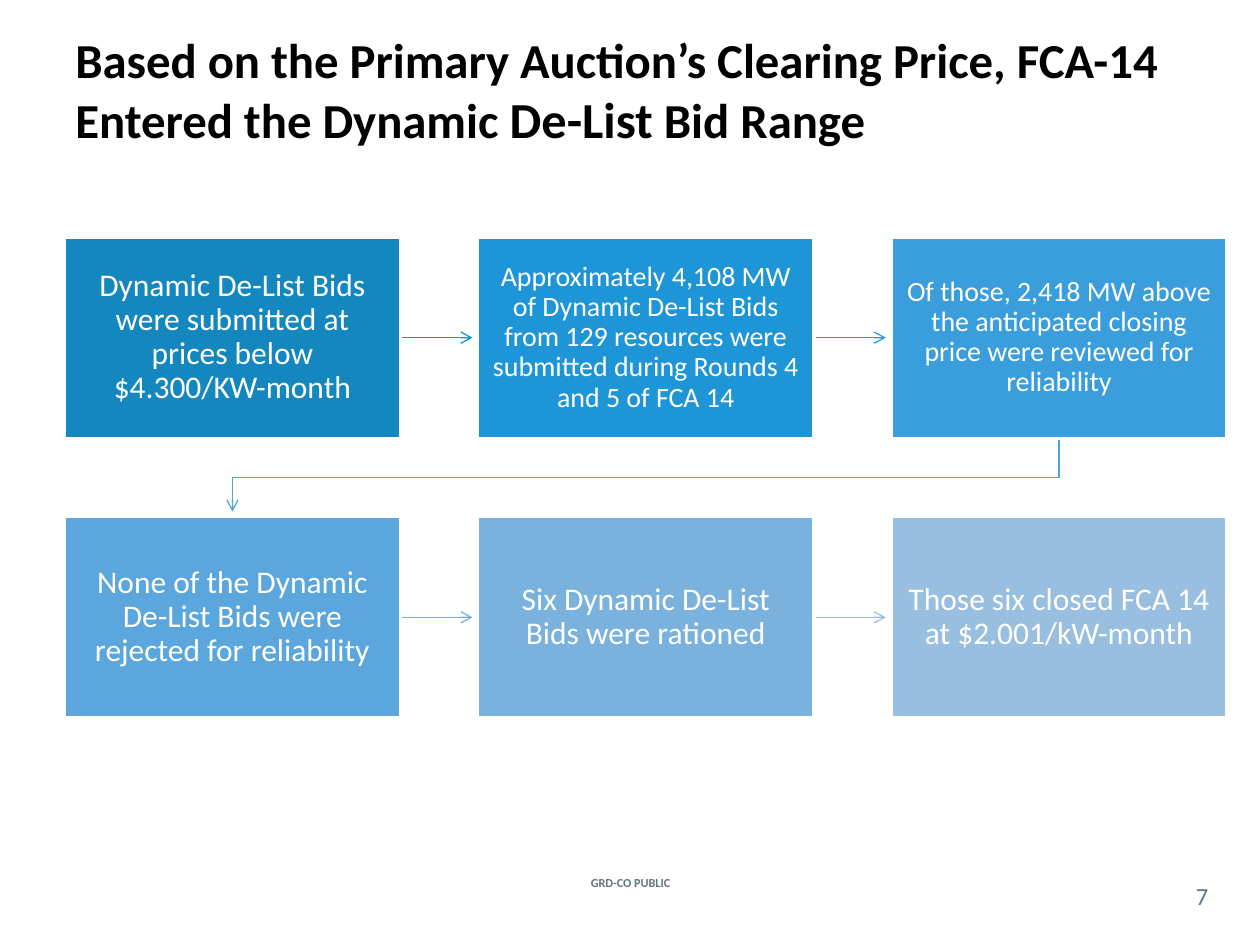
from pptx import Presentation
from pptx import util as u
from pptx.dml.color import RGBColor
from pptx.enum import shapes, text
from pptx.oxml.ns import qn
from lxml import etree

WHITE, GREY = "FFFFFF", "62777F"
BOX_W, BOX_H = 2.67, 1.6
COLS, ROWS = (0.51, 3.79, 7.07), (1.88, 4.1)

# label, text size, box colour, colour of the arrow to the next box
STEPS = [
    ("Dynamic De-List Bids were submitted at prices below $4.300/KW-month", 18, "1587BF", "168EC9"),
    ("Approximately 4,108 MW of Dynamic De-List Bids from 129 resources were submitted "
     "during Rounds 4 and 5 of FCA 14", 16, "1E95D6", "269CDE"),
    ("Of those, 2,418 MW above the anticipated closing price were reviewed for reliability",
     16, "3A9DDC", "4EA4DD"),
    ("None of the Dynamic De-List Bids were rejected for reliability", 18, "5BA6DC", "74AFDD"),
    ("Six Dynamic De-List Bids were rationed", 18, "7AB1DD", "97BEE1"),
    ("Those six closed FCA 14 at $2.001/kW-month", 18, "98BEE0", None),
]


def write(sp, runs, color, align, inset, bold=False):
    """Fill a shape with one paragraph made of (text, size) runs."""
    tf = sp.text_frame
    tf.word_wrap = True
    tf.vertical_anchor = text.MSO_ANCHOR.MIDDLE
    tf.margin_left = tf.margin_right = tf.margin_top = tf.margin_bottom = u.Inches(inset)
    p = tf.paragraphs[0]
    p.alignment = align
    p.font.name, p.font.bold = "Calibri", bold
    p.font.color.rgb = RGBColor.from_string(color)
    for words, size in runs:
        r = p.add_run()
        r.text, r.font.size = words, u.Pt(size)
    return p


def style_arrow(sp, color):
    sp.line.color.rgb = RGBColor.from_string(color)
    sp.line.width = u.Pt(0.75)
    etree.SubElement(sp.line._get_or_add_ln(), qn("a:tailEnd"), type="arrow")
    if sp._element.spPr.find(qn("a:effectLst")) is None:
        etree.SubElement(sp._element.spPr, qn("a:effectLst"))


prs = Presentation()
prs.slide_width, prs.slide_height = u.Inches(10), u.Inches(7.5)
s = prs.slides.add_slide(prs.slide_layouts[6])
center, left = text.PP_ALIGN.CENTER, text.PP_ALIGN.LEFT

title = s.shapes.add_textbox(u.Inches(0.5), u.Inches(0.08), u.Inches(9), u.Inches(1.25))
write(title, [("Based on the Primary Auction’s Clearing Price, FCA-14 Entered the Dynamic ", 27.9),
              ("De-List", 28.8), (" Bid Range", 27.9)], "000000", left, 0.1, bold=True)

for i, (label, size, fill, arrow) in enumerate(STEPS):
    x, y = COLS[i % 3], ROWS[i // 3]
    if i == 2:  # down and back to the start of the second row
        start, end = x + BOX_W / 2, COLS[0] + BOX_W / 2
        bottom, mid = y + BOX_H, y + BOX_H + 0.31
        fb = s.shapes.build_freeform(u.Inches(start), u.Inches(bottom))
        fb.add_line_segments([(u.Inches(a), u.Inches(b)) for a, b in
                              ((start, mid), (end, mid), (end, ROWS[1] - 0.04))], close=False)
        elbow = fb.convert_to_shape()
        elbow.fill.background()
        elbow.shadow.inherit = False
        style_arrow(elbow, arrow)
    elif arrow:
        mid = u.Inches(y + BOX_H / 2)
        line = s.shapes.add_connector(shapes.MSO_CONNECTOR.STRAIGHT, u.Inches(x + BOX_W), mid,
                                      u.Inches(COLS[i % 3 + 1] - 0.04), mid)
        style_arrow(line, arrow)

    box = s.shapes.add_shape(shapes.MSO_SHAPE.RECTANGLE, u.Inches(x), u.Inches(y),
                             u.Inches(BOX_W), u.Inches(BOX_H))
    box.shadow.inherit = False
    box.fill.solid()
    box.fill.fore_color.rgb = RGBColor.from_string(fill)
    box.line.color.rgb = RGBColor.from_string(WHITE)
    box.line.width = u.Pt(2)
    p = write(box, [(label, size)], WHITE, center, 0.14 if size == 18 else 0.12)
    p.line_spacing = 0.9

footer = s.shapes.add_textbox(u.Inches(4.27), u.Inches(6.92), u.Inches(1.47), u.Inches(0.17))
write(footer, [("GRD-CO PUBLIC", 7)], GREY, center, 0, bold=True)

number = s.shapes.add_textbox(u.Inches(9.33), u.Inches(6.96), u.Inches(0.42), u.Inches(0.29))
write(number, [("7", 14)], GREY, center, 0)

prs.save("out.pptx")
